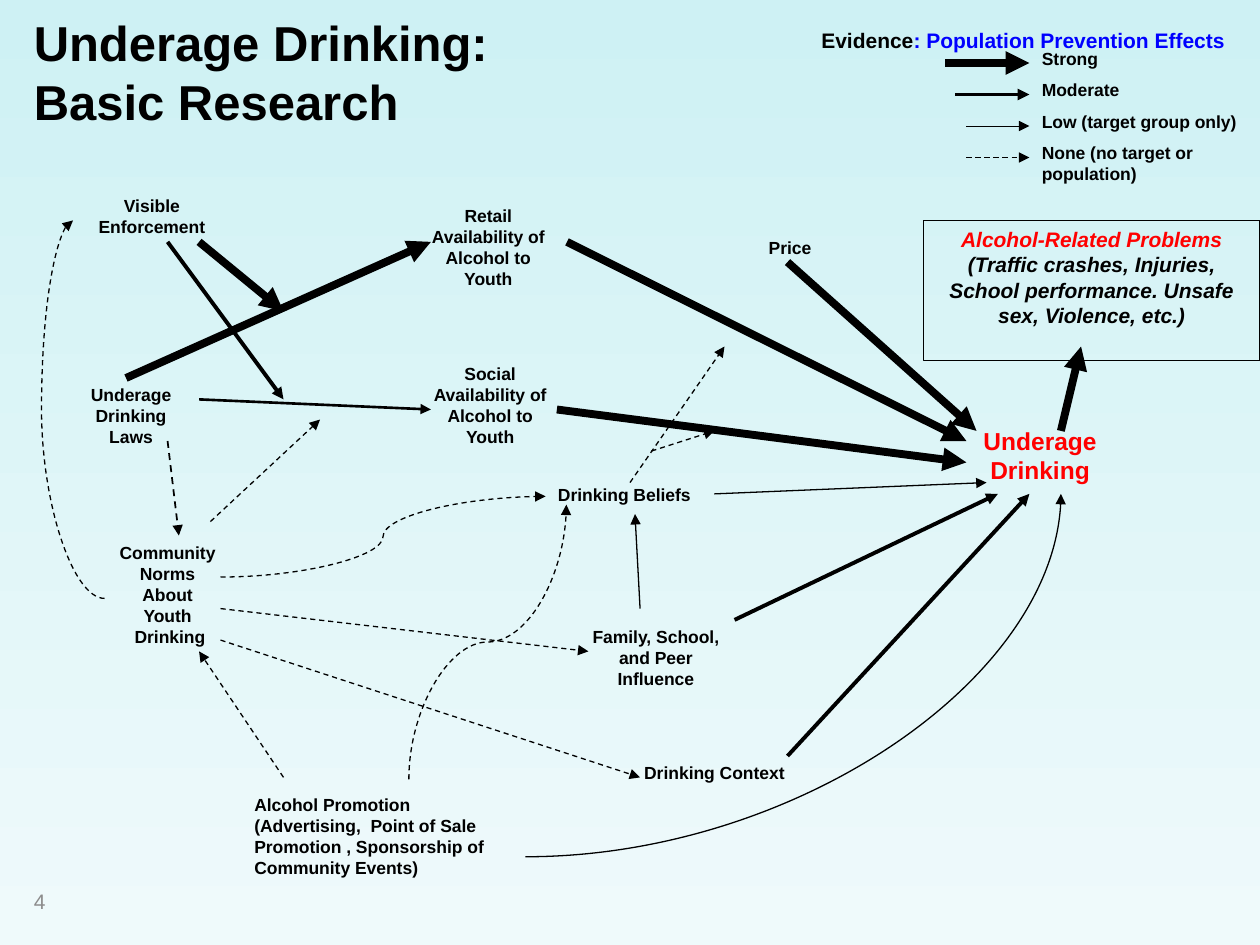
"""Build the underage drinking causal diagram slide."""
import pptx
import pptx.dml.color
import pptx.enum.dml
import pptx.enum.shapes
import pptx.enum.text
import pptx.oxml
import pptx.oxml.ns
import pptx.util
from dataclasses import dataclass

Inches = pptx.util.Inches
Pt = pptx.util.Pt
ALIGN = pptx.enum.text.PP_ALIGN
ANCHOR = pptx.enum.text.MSO_ANCHOR
LINK = pptx.enum.shapes.MSO_CONNECTOR


@dataclass(frozen=True)
class Theme:
    font: str = "Arial"
    black: str = "000000"
    red: str = "FF0000"
    blue: str = "0000FF"
    grey: str = "8C8C8C"
    sky: tuple = ("CEF1F4", "EFFAFB")
    title: int = 28
    outcome: int = 14
    heading: int = 12
    label: int = 10


T = Theme()

ARROWS = {
    "strong": (4.5, False),
    "moderate": (2.25, False),
    "medium": (1.5, False),
    "low": (0.75, False),
    "thin": (0.5, False),
    "none": (0.75, True),
    "law": (1, True),
}

FACTORS = [
    ((3.25, 1.58, 1.25, 0.77), ["Retail Availability of Alcohol to Youth"]),
    ((0.58, 1.5, 1.25, 0.5), ["Visible Enforcement"]),
    ((0.5, 3, 1.08, 0.6), ["Underage Drinking Laws"]),
    ((3.33, 2.83, 1.12, 0.88), ["Social Availability of Alcohol to Youth"]),
    ((4.58, 4.92, 1.25, 0.6), ["Family, School, and Peer Influence"]),
    ((4.92, 6, 1.5, 0.27), ["Drinking Context"]),
    ((5.83, 1.83, 0.88, 0.27), ["Price"]),
    ((0.83, 4.25, 1, 1), ["Community Norms About Youth", " Drinking"]),
]

LEFT_FACTORS = [
    ((4.33, 3.79, 1.38, 0.5), "Drinking Beliefs"),
    ((1.92, 6.25, 2.18, 0.77),
     "Alcohol Promotion (Advertising,  Point of Sale Promotion , Sponsorship of Community Events)"),
]

PROBLEMS = [
    ("Alcohol-Related Problems", T.red),
    ("(Traffic crashes, Injuries,", T.black),
    ("School performance. Unsafe sex, Violence, etc.)", T.black),
]

LINKS = [
    ("strong", (1.58, 1.92), (2.25, 2.47)),
    ("moderate", (1.33, 1.92), (2.25, 3.17)),
    ("strong", (1, 3), (3.42, 1.92)),
    ("strong", (8.42, 3.42), (8.58, 2.75)),
    ("strong", (4.5, 1.92), (7.67, 3.5)),
    ("none", (2.25, 6.17), (1.58, 5.17)),
    ("medium", (1.58, 3.17), (3.42, 3.25)),
    ("law", (1.33, 3.5), (1.42, 4.25)),
    ("none", (1.67, 4.14), (2.54, 3.33)),
    ("none", (1.75, 4.83), (4.67, 5.17)),
    ("none", (1.75, 5.08), (5.08, 6.17)),
    ("low", (5.08, 4.83), (5.04, 4.08)),
    ("moderate", (6.25, 6), (8.17, 3.92)),
    ("moderate", (5.83, 4.92), (7.92, 3.92)),
    ("strong", (4.42, 3.25), (7.67, 3.67)),
    ("none", (5, 3.83), (5.75, 2.75)),
    ("strong", (6.25, 2.08), (7.75, 3.42)),
    ("low", (5.67, 3.92), (7.83, 3.83)),
    ("none", (5.17, 3.58), (5.67, 3.42)),
]

CURVES = [
    ("none", (1.75, 4.58), (4.33, 3.94), {}),
    ("none", (2.78, 4.47), (4.96, 5.72), {"rot": 270}),
    ("low", (4.17, 6.8), (8.42, 3.92), {"preset": "curvedConnector2"}),
    ("none", (0.83, 4.75), (0.58, 1.75), {"bend": 2}),
]

LEGEND = [
    ("strong", 7.5, "Strong", 0.65, 0.27),
    ("moderate", 7.58, "Moderate", 0.82, 0.27),
    ("thin", 7.67, "Low (target group only)", 1.83, 0.27),
    ("none", 7.67, "None (no target or population)", 1.83, 0.43),
]
LEGEND_X, LEGEND_Y, LEGEND_STEP = 8.17, 0.5, 0.25


def rgb(value):
    return pptx.dml.color.RGBColor.from_string(value)


def write(s, paragraphs, size, align=ALIGN.LEFT, bold=True, italic=False, anchor=ANCHOR.TOP):
    tf = s.text_frame
    tf.word_wrap = True
    tf.vertical_anchor = anchor
    for i, runs in enumerate(paragraphs):
        p = tf.paragraphs[0] if i == 0 else tf.add_paragraph()
        p.alignment = align
        for text, color in runs:
            r = p.add_run()
            r.text = text
            r.font.name = T.font
            r.font.size = Pt(size)
            r.font.bold = bold
            r.font.italic = italic
            r.font.color.rgb = rgb(color)
    return tf


def text_box(slide, box, paragraphs, size, **options):
    s = slide.shapes.add_textbox(*map(Inches, box))
    return write(s, paragraphs, size, **options)


def arrow(slide, style, start, end, kind=LINK.STRAIGHT):
    width, dashed = ARROWS[style]
    s = slide.shapes.add_connector(kind, *map(Inches, start + end))
    s.line.color.rgb = rgb(T.black)
    s.line.width = Pt(width)
    if dashed:
        s.line.dash_style = pptx.enum.dml.MSO_LINE.DASH
    pr = s._element.spPr
    tail = pptx.oxml.parse_xml(f'<a:tailEnd {pptx.oxml.ns.nsdecls("a")} type="triangle"/>')
    pr.get_or_add_ln().append(tail)
    pr.append(pptx.oxml.parse_xml(f'<a:effectLst {pptx.oxml.ns.nsdecls("a")}/>'))
    return s


def curve(slide, style, start, end, rot=0, preset="curvedConnector3", bend=0.5):
    pr = arrow(slide, style, start, end, LINK.CURVE)._element.spPr
    qn = pptx.oxml.ns.qn
    pr.find(qn("a:xfrm")).set("rot", str(rot * 60000))
    geom = pr.find(qn("a:prstGeom"))
    geom.set("prst", preset)
    if bend != 0.5:
        guide = f'<a:gd {pptx.oxml.ns.nsdecls("a")} name="adj1" fmla="val {bend * 100000}"/>'
        geom.find(qn("a:avLst")).append(pptx.oxml.parse_xml(guide))


def main():
    prs = pptx.Presentation()
    prs.slide_width, prs.slide_height = Inches(10), Inches(7.5)
    slide = prs.slides.add_slide(prs.slide_layouts[6])
    fill = slide.background.fill
    fill.gradient()
    fill.gradient_angle = 270
    for stop, color in zip(fill.gradient_stops, T.sky):
        stop.color.rgb = rgb(color)

    for box, lines in FACTORS:
        text_box(slide, box, [[(line, T.black)] for line in lines], T.label, align=ALIGN.CENTER)
    for box, text in LEFT_FACTORS:
        text_box(slide, box, [[(text, T.black)]], T.label)
    text_box(slide, (7.42, 3.33, 1.67, 0.5), [[("Underage Drinking", T.red)]], T.outcome,
             align=ALIGN.CENTER)

    s = slide.shapes.add_shape(pptx.enum.shapes.MSO_SHAPE.RECTANGLE,
                               *map(Inches, (7.33, 1.75, 2.67, 1.11)))
    s.shadow.inherit = False
    s.fill.background()
    s.line.color.rgb = rgb(T.black)
    s.line.width = Pt(0.75)
    write(s, [[run] for run in PROBLEMS], T.heading, align=ALIGN.CENTER, italic=True)

    for link in LINKS:
        arrow(slide, *link)
    for style, start, end, options in CURVES:
        curve(slide, style, start, end, **options)

    text_box(slide, (0.17, 0.05, 6.37, 1.34),
             [[("Underage Drinking:", T.black)], [("Basic Research", T.black)]], T.title)
    text_box(slide, (6.42, 0.17, 3.58, 0.5),
             [[("Evidence", T.black), (": Population Prevention Effects", T.blue)]], T.heading)
    for i, (style, x, text, width, height) in enumerate(LEGEND):
        y = LEGEND_Y + i * LEGEND_STEP
        arrow(slide, style, (x, y), (LEGEND_X, y))
        tf = text_box(slide, (LEGEND_X, y - 0.17, width, height), [[(text, T.black)]], T.label)
        tf.word_wrap = text != "Strong"
    text_box(slide, (0.17, 6.95, 2.33, 0.4), [[("4", T.grey)]], T.heading, bold=False,
             anchor=ANCHOR.MIDDLE)
    prs.save("out.pptx")


if __name__ == "__main__":
    main()
